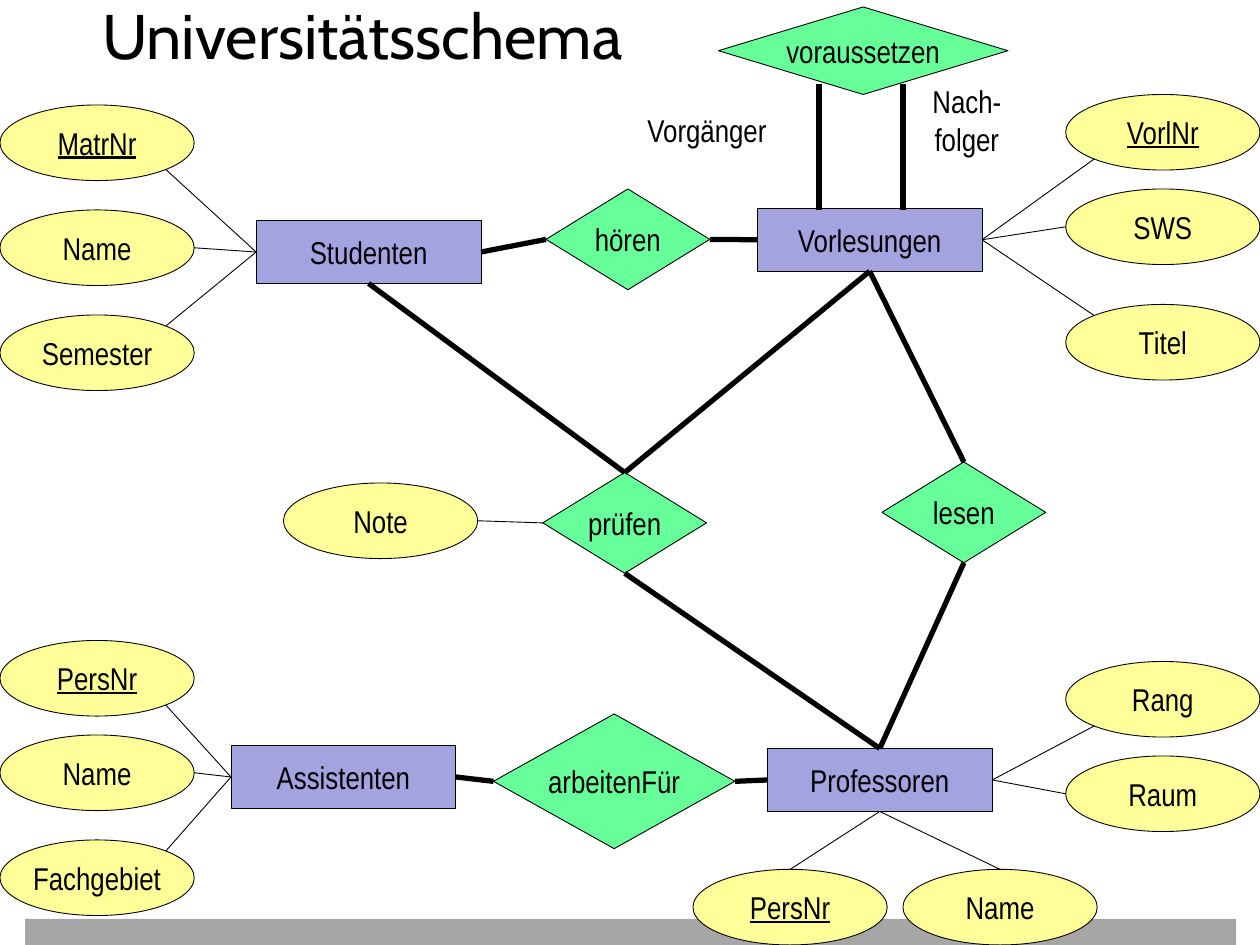
from math import sqrt
from lxml.etree import SubElement
from pptx import Presentation
from pptx.dml.color import RGBColor
from pptx.enum.shapes import MSO_CONNECTOR, MSO_SHAPE
from pptx.enum.text import MSO_ANCHOR, PP_ALIGN
from pptx.oxml.ns import qn
from pptx.util import Pt

BLACK = RGBColor(0x00, 0x00, 0x00)
GRAY = RGBColor(0xA6, 0xA6, 0xA6)
BLUE = RGBColor(0xA3, 0xA3, 0xE0)
GREEN = RGBColor(0x66, 0xFF, 0x99)
YELLOW = RGBColor(0xFF, 0xFF, 0x99)
TOP, LEFT, BOTTOM, RIGHT = range(4)
ATTR_W, ATTR_H = 111, 43.2

prs = Presentation()
prs.slide_width, prs.slide_height = Pt(720), Pt(540)
s = prs.slides.add_slide(prs.slide_layouts[6])


def put_text(sp, text, font="Arial Narrow", size=18, underline=None,
             anchor=MSO_ANCHOR.MIDDLE, wrap=False):
    tf = sp.text_frame
    tf.word_wrap = wrap
    tf.vertical_anchor = anchor
    for i, line in enumerate(text.split("\n")):
        p = tf.add_paragraph() if i else tf.paragraphs[0]
        p.alignment = PP_ALIGN.CENTER
        r = p.add_run()
        r.text = line
        r.font.name, r.font.size = font, Pt(size)
        r.font.underline = underline
        r.font.color.rgb = BLACK


def add_line(x1, y1, x2, y2, width):
    cx = s.shapes.add_connector(MSO_CONNECTOR.STRAIGHT, Pt(x1), Pt(y1), Pt(x2), Pt(y2))
    cx.line.color.rgb = BLACK
    cx.line.width = Pt(width)
    SubElement(cx._element.spPr, qn("a:effectLst"))
    return cx


bar = s.shapes.add_shape(MSO_SHAPE.RECTANGLE, Pt(14.4), Pt(525), Pt(692), Pt(15))
bar.shadow.inherit = False
bar.fill.solid()
bar.fill.fore_color.rgb = GRAY
bar.line.fill.background()

entities = [
    ("Studenten", 146.4, 126),
    ("Assistenten", 132, 426),
    ("Professoren", 438.5, 427.7),
    ("Vorlesungen", 432.7, 119),
]
relationships = [
    ("hören", 312, 108, 93.6, 57.6),
    ("prüfen", 310.2, 270, 93.6, 57.6),
    ("lesen", 504, 264, 93.6, 57.6),
    ("arbeitenFür", 282, 408, 138, 77),
    ("voraussetzen", 410.5, 4, 165.5, 50),
]
# owner, side of owner, label, left, top, key, attachment direction on the ellipse
attributes = [
    ("Studenten", LEFT, "MatrNr", 0, 60, True, 1, 1),
    ("Studenten", LEFT, "Name", 0, 120, None, 1, 0),
    ("Studenten", LEFT, "Semester", 0, 180, None, 1, -1),
    ("Assistenten", LEFT, "PersNr", 0, 366, True, 1, 1),
    ("Assistenten", LEFT, "Name", 0, 420, None, 1, 0),
    ("Assistenten", LEFT, "Fachgebiet", 0, 480, None, 1, -1),
    ("Vorlesungen", RIGHT, "VorlNr", 609, 54, True, -1, 1),
    ("Vorlesungen", RIGHT, "SWS", 609, 108, None, -1, 0),
    ("Vorlesungen", RIGHT, "Titel", 609, 174, None, -1, -1),
    ("Professoren", RIGHT, "Rang", 609, 378, None, -1, 1),
    ("Professoren", RIGHT, "Raum", 609, 432, None, -1, 0),
    ("Professoren", BOTTOM, "PersNr", 396, 496.8, True, 0, -1),
    ("Professoren", BOTTOM, "Name", 516, 496.8, None, 0, -1),
    ("prüfen", LEFT, "Note", 162, 276, None, 1, 0),
]
links = [
    ("Studenten", RIGHT, "hören", LEFT),
    ("hören", RIGHT, "Vorlesungen", LEFT),
    ("prüfen", TOP, "Studenten", BOTTOM),
    ("Vorlesungen", BOTTOM, "prüfen", TOP),
    ("Vorlesungen", BOTTOM, "lesen", TOP),
    ("prüfen", BOTTOM, "Professoren", TOP),
    ("Professoren", TOP, "lesen", BOTTOM),
    ("Assistenten", RIGHT, "arbeitenFür", LEFT),
    ("arbeitenFür", RIGHT, "Professoren", LEFT),
]

nodes = [(MSO_SHAPE.RECTANGLE, BLUE, n, x, y, 128.5, 36, None) for n, x, y in entities]
nodes += [(MSO_SHAPE.DIAMOND, GREEN, *rel, None) for rel in relationships]
nodes += [(MSO_SHAPE.OVAL, YELLOW, n, x, y, ATTR_W, ATTR_H, key)
          for _, _, n, x, y, key, _, _ in attributes]
shapes = {}
for kind, color, name, x, y, w, h, key in nodes:
    sp = s.shapes.add_shape(kind, Pt(x), Pt(y), Pt(w), Pt(h))
    sp.shadow.inherit = False
    sp.fill.solid()
    sp.fill.fore_color.rgb = color
    sp.line.color.rgb = BLACK
    sp.line.width = Pt(0.5)
    put_text(sp, name, underline=key)
    shapes[name] = sp

for owner, side, _, x, y, _, dx, dy in attributes:
    k = sqrt(0.5) if dx and dy else 1
    end_x = x + ATTR_W / 2 * (1 + k * dx)
    end_y = y + ATTR_H / 2 * (1 + k * dy)
    add_line(0, 0, end_x, end_y, 0.5).begin_connect(shapes[owner], side)

for start, start_side, end, end_side in links:
    cx = add_line(0, 0, 1, 1, 3)
    cx.begin_connect(shapes[start], start_side)
    cx.end_connect(shapes[end], end_side)

for x in (468, 516):
    add_line(x, 48, x, 120, 3)

for text, x, y, w, h, fmt in [
    ("Nach-\nfolger", 498, 43.2, 109, 51, {"anchor": MSO_ANCHOR.TOP}),
    ("Vorgänger", 336, 60, 136, 29, {"anchor": MSO_ANCHOR.TOP}),
    ("Universitätsschema", 0, 15, 414, 30,
     {"font": "Cabin", "size": 36, "anchor": MSO_ANCHOR.BOTTOM}),
]:
    tb = s.shapes.add_textbox(Pt(x), Pt(y), Pt(w), Pt(h))
    put_text(tb, text, wrap=True, **fmt)

prs.save("out.pptx")
